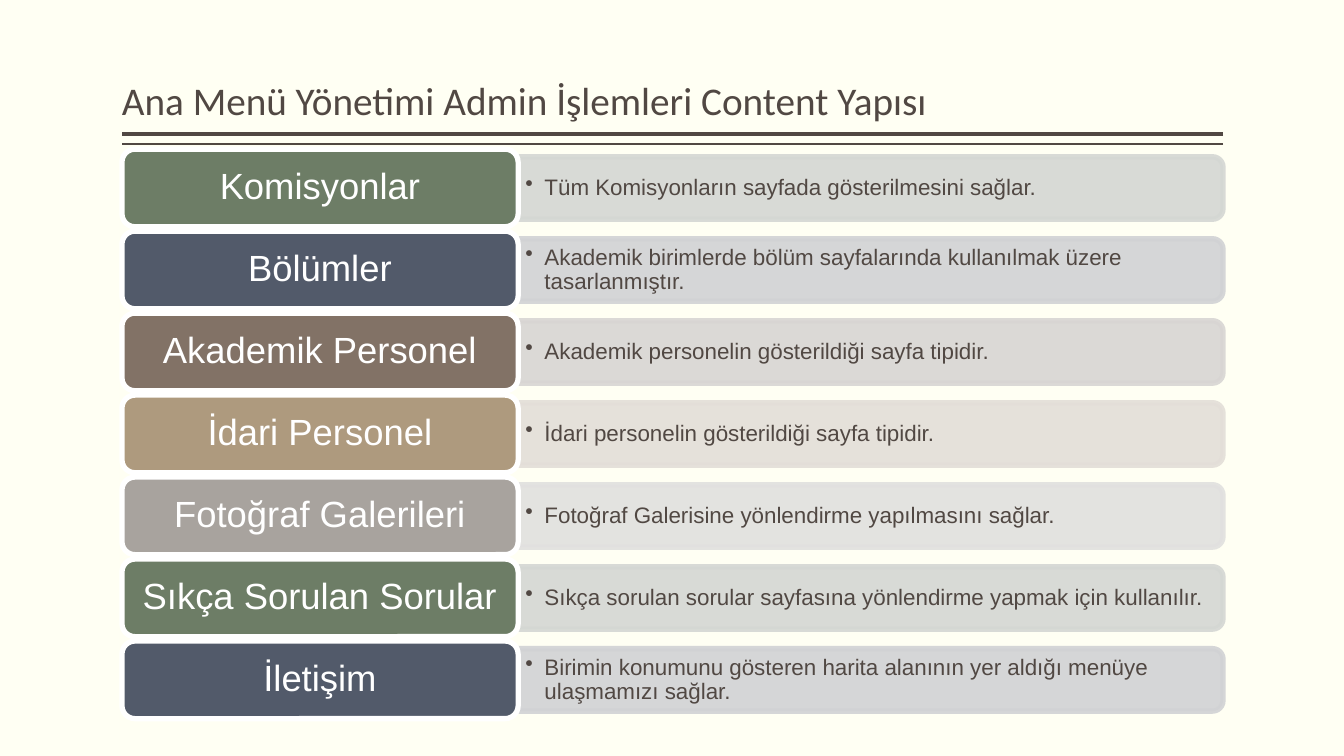
from dataclasses import dataclass

from lxml import etree
from pptx import Presentation
from pptx.dml.color import RGBColor
from pptx.enum.shapes import MSO_CONNECTOR, MSO_SHAPE
from pptx.enum.text import MSO_ANCHOR, MSO_AUTO_SIZE, PP_ALIGN
from pptx.oxml.ns import qn
from pptx.util import Inches, Pt

STRAIGHT = MSO_CONNECTOR.STRAIGHT
ROUND = MSO_SHAPE.ROUNDED_RECTANGLE
ROUND_TOP = MSO_SHAPE.ROUND_2_SAME_RECTANGLE
MIDDLE, BOTTOM = MSO_ANCHOR.MIDDLE, MSO_ANCHOR.BOTTOM
LEFT, CENTER = PP_ALIGN.LEFT, PP_ALIGN.CENTER
NO_FIT = MSO_AUTO_SIZE.NONE

COLORS = {
    "page": "FFFFF3", "ink": "514843", "white": "FFFFFF",
    "green": "6D7D66", "green_bar": "D4D7D3",
    "blue": "525A6A", "blue_bar": "D1D2D4",
    "brown": "827266", "brown_bar": "D8D5D3",
    "tan": "AE9A7E", "tan_bar": "E3DED8",
    "gray": "A8A39E", "gray_bar": "E1E0DF",
}
EDGE, RIGHT = 1.21, 12.13
TOP, STEP = 1.48, 0.8133
LABEL_W, LABEL_H = 3.93, 0.77
BAR_W, BAR_H = 6.99, 0.62
NOTE_W, NOTE_H = 6.96, 0.56


@dataclass
class Row:
    label: str
    note: str
    tone: str


@dataclass
class Rule:
    y: float
    width: float


ROWS = [
    Row("Komisyonlar", "Tüm Komisyonların sayfada gösterilmesini sağlar.", "green"),
    Row("Bölümler", "Akademik birimlerde bölüm sayfalarında kullanılmak üzere tasarlanmıştır.", "blue"),
    Row("Akademik Personel", "Akademik personelin gösterildiği sayfa tipidir.", "brown"),
    Row("İdari Personel", "İdari personelin gösterildiği sayfa tipidir.", "tan"),
    Row("Fotoğraf Galerileri", "Fotoğraf Galerisine yönlendirme yapılmasını sağlar.", "gray"),
    Row("Sıkça Sorulan Sorular", "Sıkça sorulan sorular sayfasına yönlendirme yapmak için kullanılır.", "green"),
    Row("İletişim", "Birimin konumunu gösteren harita alanının yer aldığı menüye ulaşmamızı sağlar.", "blue"),
]
RULES = [Rule(1.33, 3), Rule(1.43, 1)]


def color(name: str) -> RGBColor:
    return RGBColor.from_string(COLORS[name])


def write(shape, text: str, size: int, font: str, tone: str, align, anchor,
          pad: tuple[float, float], bullet: bool = False) -> None:
    frame = shape.text_frame
    frame.text = text
    frame.word_wrap = True
    frame.auto_size = NO_FIT
    frame.vertical_anchor = anchor
    frame.margin_left = frame.margin_right = Inches(pad[0])
    frame.margin_top = frame.margin_bottom = Inches(pad[1])
    para = frame.paragraphs[0]
    para.alignment = align
    para.line_spacing = 0.9
    if bullet:
        props = para._p.get_or_add_pPr()
        props.set("marL", str(Inches(0.19)))
        props.set("indent", str(Inches(-0.19)))
        etree.SubElement(props, qn("a:buChar")).set("char", "•")
    run = para.runs[0]
    run.font.size = Pt(size)
    run.font.name = font
    run.font.color.rgb = color(tone)


def paint(shape, fill: str, line: str) -> None:
    shape.shadow.inherit = False
    shape.fill.solid()
    shape.fill.fore_color.rgb = color(fill)
    shape.line.color.rgb = color(line)
    shape.line.width = Pt(3.78)


def draw_rule(slide, rule: Rule) -> None:
    line = slide.shapes.add_connector(
        STRAIGHT, Inches(RIGHT), Inches(rule.y), Inches(EDGE), Inches(rule.y))
    line.line.color.rgb = color("ink")
    line.line.width = Pt(rule.width)
    etree.SubElement(line._element.spPr, qn("a:effectLst"))


def draw_row(slide, row: Row, top: float) -> None:
    mid = top + LABEL_H / 2
    split = EDGE + LABEL_W
    bar = slide.shapes.add_shape(
        ROUND_TOP, Inches(split + (BAR_W - BAR_H) / 2), Inches(mid - BAR_W / 2),
        Inches(BAR_H), Inches(BAR_W))
    bar.rotation = 90
    paint(bar, f"{row.tone}_bar", f"{row.tone}_bar")
    for tint in bar._element.spPr.iter(qn("a:srgbClr")):
        etree.SubElement(tint, qn("a:alpha")).set("val", "90000")

    note = slide.shapes.add_textbox(
        Inches(split), Inches(mid - NOTE_H / 2), Inches(NOTE_W), Inches(NOTE_H))
    write(note, row.note, 16, "Arial", "ink", LEFT, MIDDLE, (0.07, 0.03), True)

    label = slide.shapes.add_shape(
        ROUND, Inches(EDGE), Inches(top), Inches(LABEL_W), Inches(LABEL_H))
    paint(label, row.tone, "white")
    write(label, row.label, 26, "Arial", "white", CENTER, MIDDLE, (0.11, 0.05))


def main() -> None:
    """Build the slide of menu items and save it."""
    deck = Presentation()
    deck.slide_width, deck.slide_height = Inches(13.33), Inches(7.5)
    slide = deck.slides.add_slide(deck.slide_layouts[5])
    slide.background.fill.solid()
    slide.background.fill.fore_color.rgb = color("page")

    title = slide.shapes.title
    title.left, title.top = Inches(EDGE), Inches(0.08)
    title.width, title.height = Inches(RIGHT - EDGE), Inches(1.2)
    write(title, "Ana Menü Yönetimi Admin İşlemleri Content Yapısı",
          28, "Calibri", "ink", LEFT, BOTTOM, (0, 0.05))

    for rule in RULES:
        draw_rule(slide, rule)
    for i, row in enumerate(ROWS):
        draw_row(slide, row, TOP + i * STEP)
    deck.save("out.pptx")


if __name__ == "__main__":
    main()
